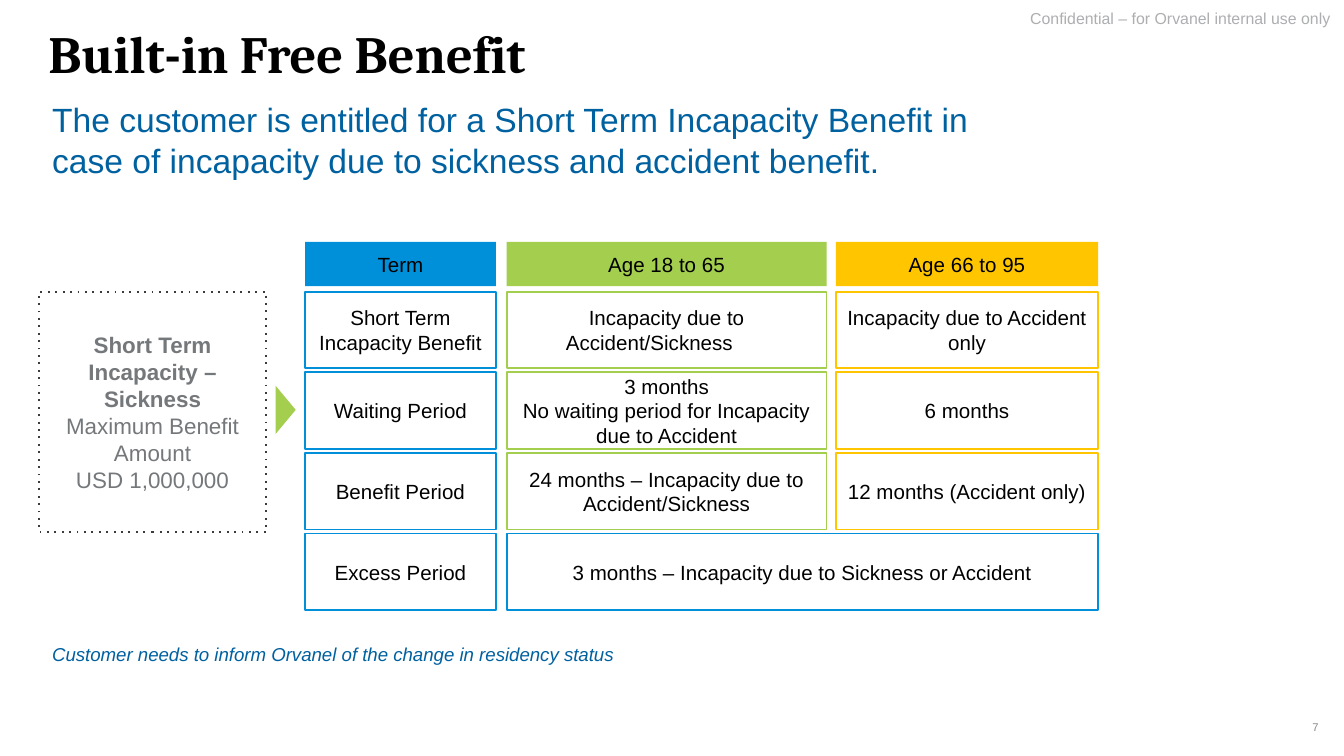
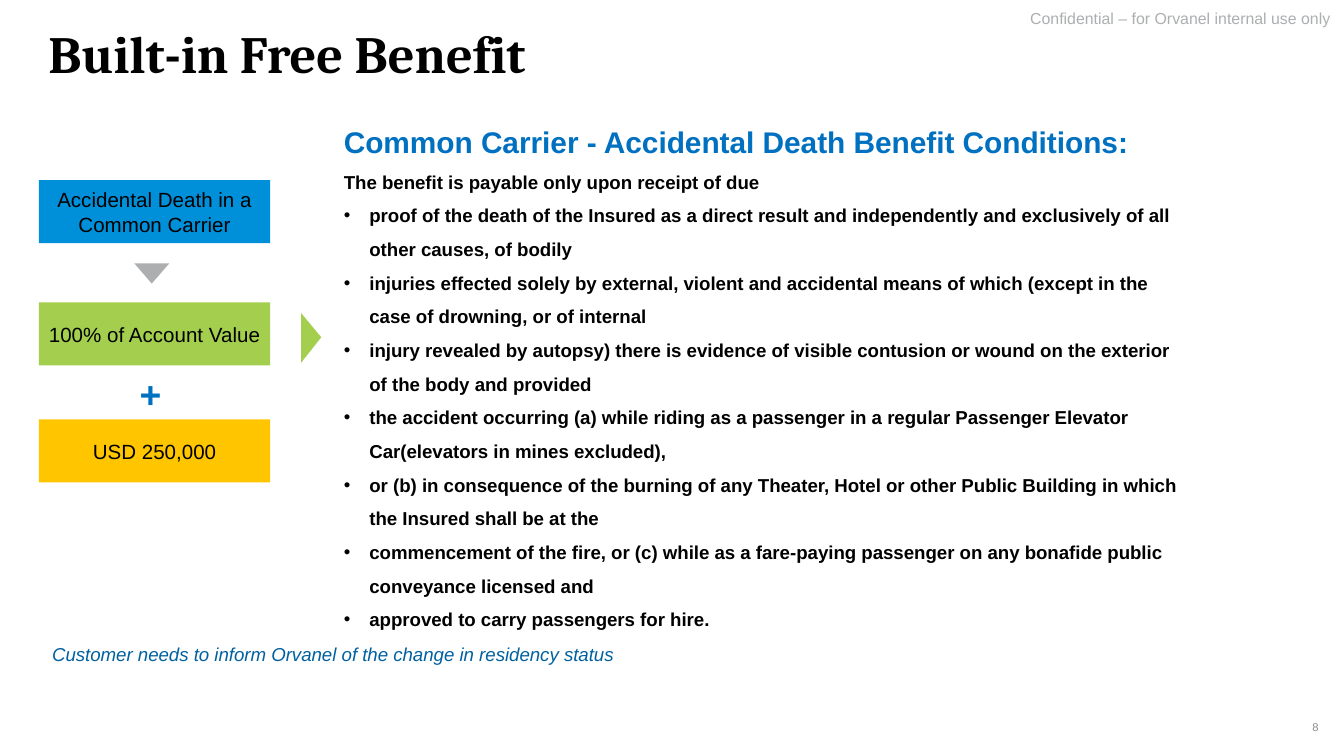
from lxml import etree
from pptx import Presentation
from pptx.dml.color import RGBColor
from pptx.enum.dml import MSO_LINE
from pptx.enum.shapes import MSO_SHAPE
from pptx.enum.text import MSO_ANCHOR, PP_ALIGN
from pptx.oxml.ns import qn
from pptx.util import Inches, Pt

RECTANGLE = MSO_SHAPE.RECTANGLE
DOTTED = MSO_LINE.ROUND_DOT
TOP, MIDDLE, BOTTOM = MSO_ANCHOR.TOP, MSO_ANCHOR.MIDDLE, MSO_ANCHOR.BOTTOM
LEFT, CENTER, RIGHT = PP_ALIGN.LEFT, PP_ALIGN.CENTER, PP_ALIGN.RIGHT

BLACK, GRAY, NAVY, HEADING_BLUE = "000000", "ACAEB0", "0061A0", "0070C0"
BLUE, GREEN, YELLOW = "0090DA", "A3CE4E", "FFC600"
MARGIN = 0.29
rgb = RGBColor.from_string


def add_box(slide, left, top, width, height, fill=None, line=None, dotted=False,
            anchor=TOP, pad=(0.1, 0.05), wrap=True):
    """Add a rectangle, or a plain text box without fill and line; return its text frame."""
    place = [Inches(value) for value in (left, top, width, height)]
    if fill or line:
        shape = slide.shapes.add_shape(RECTANGLE, *place)
        shape.shadow.inherit = False
    else:
        shape = slide.shapes.add_textbox(*place)
    if fill:
        shape.fill.solid()
        shape.fill.fore_color.rgb = rgb(fill)
    else:
        shape.fill.background()
    if line:
        shape.line.color.rgb = rgb(line)
        shape.line.width = Pt(1)
        if dotted:
            shape.line.dash_style = DOTTED
            # Widely spaced dots have no preset in the enum
            shape.element.spPr.find(f".//{qn('a:prstDash')}").set("val", "dot")
    else:
        shape.line.fill.background()
    frame = shape.text_frame
    frame.word_wrap = wrap
    frame.vertical_anchor = anchor
    frame.margin_left = frame.margin_right = Inches(pad[0])
    frame.margin_top = frame.margin_bottom = Inches(pad[1])
    return frame


def add_text(frame, text, size=11, color=BLACK, font="Arial", bold=False, italic=False,
             align=LEFT, spacing=None, bullet=False):
    """Write one paragraph, using the empty first one when it is still free."""
    paragraph = frame.paragraphs[0]
    if paragraph.runs:
        paragraph = frame.add_paragraph()
    if bullet:
        properties = paragraph._p.get_or_add_pPr()
        properties.set("marL", str(Inches(0.19)))
        properties.set("indent", str(-Inches(0.19)))
        etree.SubElement(properties, qn("a:buFont")).set("typeface", font)
        etree.SubElement(properties, qn("a:buChar")).set("char", "•")
    paragraph.alignment = align
    if spacing:
        paragraph.line_spacing = spacing
    run = paragraph.add_run()
    run.text = text
    run.font.name = font
    run.font.size = Pt(size)
    run.font.bold = bold
    run.font.italic = italic
    run.font.color.rgb = rgb(color)


# Widescreen, 16:9
prs = Presentation()
prs.slide_width = Inches(10)
prs.slide_height = prs.slide_width * 9 // 16

# Shared parts: confidentiality line, title, page number, residency note
slides = []
for page in (7, 8):
    slide = prs.slides.add_slide(prs.slide_layouts[6])
    slides.append(slide)
    add_text(add_box(slide, 6.94, 0.08, 3.06, 0.17, pad=(0.1, 0)),
             "Confidential – for Orvanel internal use only",
             size=8.5, color=GRAY, align=RIGHT, spacing=0.9)
    add_text(add_box(slide, MARGIN, 0.17, 7.59, 0.54, pad=(0.07, 0.04)),
             "Built-in Free Benefit", size=28, font="Cambria", bold=True, spacing=0.9)
    add_text(add_box(slide, 9.14, 5.26, 0.74, 0.3, anchor=MIDDLE, pad=(0.07, 0.04)),
             str(page), size=6, color="8C8C8C", align=RIGHT)
    add_text(add_box(slide, MARGIN, 4.6, 4.43, 0.35, anchor=BOTTOM, pad=(0.1, 0)),
             "Customer needs to inform Orvanel of the change in residency status",
             size=10, color=NAVY, italic=True)
incapacity, carrier = slides

# Incapacity: introduction
add_text(add_box(incapacity, MARGIN, 1.01, 7.6, 0.33, anchor=BOTTOM, pad=(0.1, 0)),
         "The customer is entitled for a Short Term Incapacity Benefit in case of "
         "incapacity due to sickness and accident benefit.", size=18, color=NAVY)

# Incapacity: maximum benefit
maximum = add_box(incapacity, MARGIN, 2.17, 1.69, 1.79, line="3A3C3E", dotted=True, anchor=MIDDLE)
for text, bold in [("Short Term Incapacity – Sickness", True),
                   ("Maximum Benefit Amount", False),
                   ("USD 1,000,000", False)]:
    add_text(maximum, text, size=12, color="75787B", bold=bold, align=CENTER)

# Incapacity: grid of terms by age
columns = [
    (2.27, 1.42, BLUE, "Term",
     ["Short Term Incapacity Benefit", "Waiting Period", "Benefit Period", "Excess Period"]),
    (3.77, 2.38, GREEN, "Age 18 to 65",
     ["Incapacity due to Accident/Sickness\t",
      "3 months\nNo waiting period for Incapacity due to Accident",
      "24 months – Incapacity due to Accident/Sickness"]),
    (6.22, 1.95, YELLOW, "Age 66 to 95",
     ["Incapacity due to Accident only", "6 months", "12 months (Accident only)"]),
]
FIRST_ROW, ROW_STEP, ROW_HEIGHT = 2.17, 0.6, 0.57
cells = []
for left, width, color, heading, terms in columns:
    header = add_box(incapacity, left, 1.8, width, 0.33, fill=color, anchor=MIDDLE, pad=(0, 0))
    add_text(header, heading, align=CENTER)
    cells += [(left, row, width, color, term) for row, term in enumerate(terms)]
cells.append((3.77, 3, 4.4, BLUE, "3 months – Incapacity due to Sickness or Accident"))
for left, row, width, color, term in cells:
    cell = add_box(incapacity, left, FIRST_ROW + row * ROW_STEP, width, ROW_HEIGHT,
                   line=color, anchor=MIDDLE, pad=(0, 0))
    for text in term.split("\n"):
        add_text(cell, text, align=CENTER)

# Common carrier: conditions
conditions = add_box(carrier, 2.46, 0.87, 6.48, 4.16)
add_text(conditions, "Common Carrier - Accidental Death Benefit Conditions:",
         size=16, color=HEADING_BLUE, bold=True)
add_text(conditions, "The benefit is payable only upon receipt of due",
         size=10, bold=True, spacing=1.5)
for text in [
    "proof of the death of the Insured as a direct result and independently and exclusively "
    "of all other causes, of bodily",
    "injuries effected solely by external, violent and accidental means of which (except in "
    "the case of drowning, or of internal",
    "injury revealed by autopsy) there is evidence of visible contusion or wound on the "
    "exterior of the body and provided",
    "the accident occurring (a) while riding as a passenger in a regular Passenger Elevator "
    "Car(elevators in mines excluded),",
    "or (b) in consequence of the burning of any Theater, Hotel or other Public Building in "
    "which the Insured shall be at the",
    "commencement of the fire, or (c) while as a fare-paying passenger on any bonafide public "
    "conveyance licensed and",
    "approved to carry passengers for hire.",
]:
    add_text(conditions, text, size=10, bold=True, spacing=1.5, bullet=True)

# Common carrier: what is paid
for top, color, text in [(1.34, BLUE, "Accidental Death in a Common Carrier"),
                         (2.25, GREEN, "100% of Account Value"),
                         (3.12, YELLOW, "USD 250,000")]:
    payout = add_box(carrier, MARGIN, top, 1.72, 0.47, fill=color, anchor=MIDDLE, pad=(0, 0))
    add_text(payout, text, align=CENTER)
add_text(add_box(carrier, 0.94, 2.71, 0.36, 0.44, wrap=False),
         "+", size=20, color=HEADING_BLUE, bold=True)

# Triangular pointers
for slide, color, corners in [
    (incapacity, GREEN, [(2.05, 2.87), (2.2, 3.05), (2.05, 3.23)]),
    (carrier, GREEN, [(2.24, 2.33), (2.39, 2.51), (2.24, 2.7)]),
    (carrier, GRAY, [(1, 1.96), (1.26, 1.96), (1.13, 2.11)]),
]:
    start, *others = [(Inches(x), Inches(y)) for x, y in corners]
    outline = slide.shapes.build_freeform(*start)
    outline.add_line_segments(others, close=True)
    pointer = outline.convert_to_shape()
    pointer.shadow.inherit = False
    pointer.fill.solid()
    pointer.fill.fore_color.rgb = rgb(color)
    pointer.line.fill.background()

prs.save("out.pptx")
